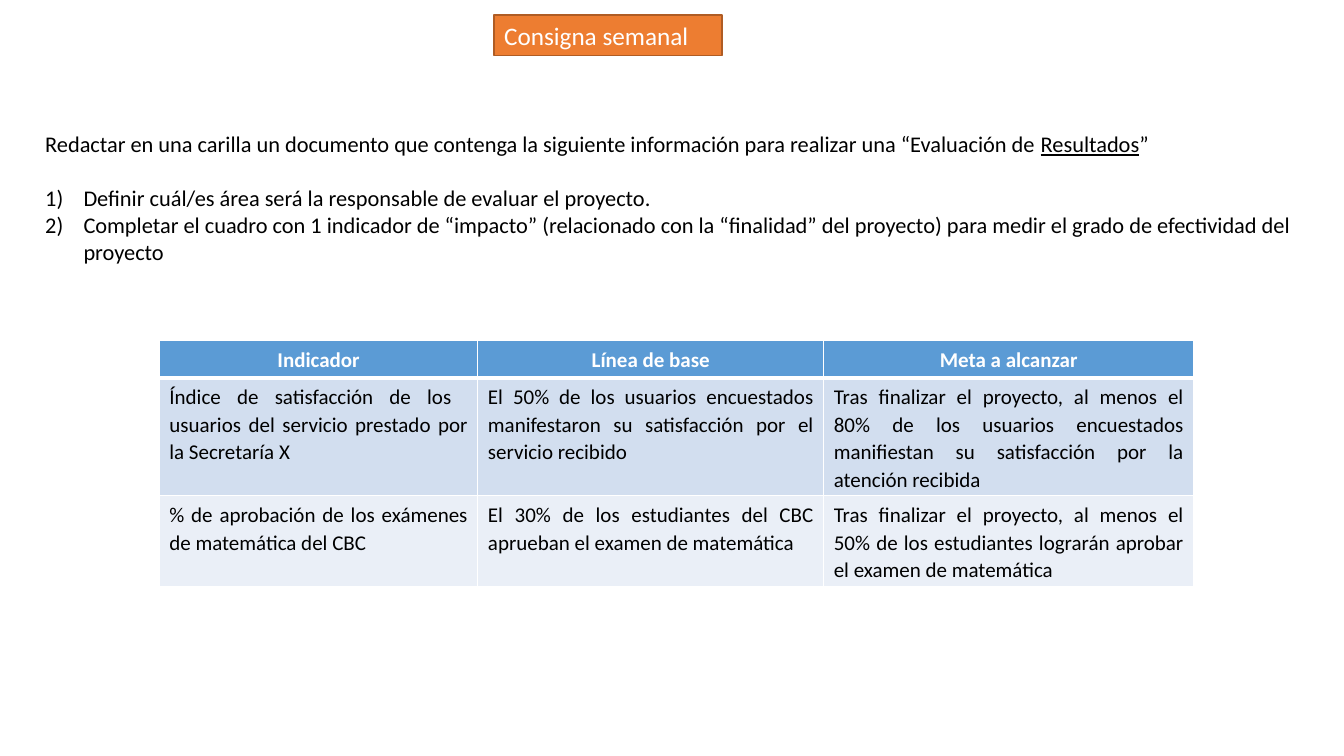
from lxml.etree import SubElement
from pptx import Presentation
from pptx.dml.color import RGBColor
from pptx.enum.text import MSO_ANCHOR, MSO_AUTO_SIZE, PP_ALIGN
from pptx.oxml.ns import qn
from pptx.util import Inches, Pt

COLORS = {
    "white": "FFFFFF", "black": "000000", "orange": "ED7D31", "rust": "AF5C24",
    "head": "5B9BD5", "band": "D2DEEF", "pale": "EAEFF7",
}
INTRO = [
    ("Redactar en una carilla un documento que contenga la siguiente información "
     "para realizar una “Evaluación de ", False),
    ("Resultados", True),
    ("”", False),
]
TASKS = [
    "Definir cuál/es área será la responsable de evaluar el proyecto.",
    "Completar el cuadro con 1 indicador de “impacto” (relacionado con la “finalidad” "
    "del proyecto) para medir el grado de efectividad del proyecto",
]
ROWS = [
    ["Indicador", "Línea de base", "Meta a alcanzar"],
    ["Índice de satisfacción de los  usuarios del servicio prestado por la Secretaría X",
     "El 50% de los usuarios encuestados manifestaron su satisfacción por el servicio recibido",
     "Tras finalizar el proyecto, al menos el 80% de los usuarios encuestados manifiestan "
     "su satisfacción por la atención recibida"],
    ["% de aprobación de los exámenes de matemática del CBC",
     "El 30% de los estudiantes del CBC aprueban el examen de matemática",
     "Tras finalizar el proyecto, al menos el 50% de los estudiantes lograrán aprobar "
     "el examen de matemática"],
]
WIDTHS = [3.16, 3.43, 3.67]
HEIGHTS = [0.37, 1.17, 0.9]
FILLS = ["head", "band", "pale"]


def color(name):
    """Return the named colour."""
    return RGBColor.from_string(COLORS[name])


def assign(item, values):
    """Set each attribute of the item from a dict."""
    for name, value in values.items():
        setattr(item, name, value)


def add_run(para, text, size, tint, **extra):
    """Add a formatted run to a paragraph."""
    run = para.add_run()
    run.text = text
    assign(run.font, {"name": "Calibri", "size": Pt(size), **extra})
    run.font.color.rgb = color(tint)


def paint(shape, tint):
    """Give a shape or cell a solid fill."""
    shape.fill.solid()
    shape.fill.fore_color.rgb = color(tint)


def add_title(slide, box):
    """Turn the title placeholder into the orange label."""
    title = slide.shapes.title
    assign(title, dict(zip(("left", "top", "width", "height"), map(Inches, box))))
    paint(title, "orange")
    title.line.color.rgb = color("rust")
    title.line.width = Pt(1)
    frame = title.text_frame
    assign(frame, {"word_wrap": True, "auto_size": MSO_AUTO_SIZE.NONE,
                   "vertical_anchor": MSO_ANCHOR.TOP})
    para = frame.paragraphs[0]
    para.alignment = PP_ALIGN.LEFT
    add_run(para, "Consigna semanal", 18, "white")


def add_brief(slide, box):
    """Write the introduction and the numbered tasks."""
    frame = slide.shapes.add_textbox(*map(Inches, box)).text_frame
    frame.word_wrap = True
    intro = frame.paragraphs[0]
    intro.space_after = Pt(19.5)
    for text, under in INTRO:
        add_run(intro, text, 16, "black", underline=under)
    for task in TASKS:
        para = frame.add_paragraph()
        props = para._p.get_or_add_pPr()
        props.set("marL", str(Inches(0.38)))
        props.set("indent", str(Inches(-0.38)))
        SubElement(props, qn("a:buFont"), typeface="+mj-lt")
        SubElement(props, qn("a:buAutoNum"), type="arabicParenR")
        add_run(para, task, 16, "black")


def add_edges(cell, row):
    """Draw white cell borders, thicker below the header."""
    props = cell._tc.get_or_add_tcPr()
    thick = {("B", 0), ("T", 1)}
    for side in "LRTB":
        width = Pt(3 if (side, row) in thick else 1)
        edge = SubElement(props, qn(f"a:ln{side}"), w=str(width))
        fill = SubElement(edge, qn("a:solidFill"))
        SubElement(fill, qn("a:srgbClr"), val=COLORS["white"])


def add_grid(slide, left, top):
    """Build the table of indicators."""
    box = map(Inches, (left, top, sum(WIDTHS), sum(HEIGHTS)))
    table = slide.shapes.add_table(len(ROWS), len(WIDTHS), *box).table
    for column, width in zip(table.columns, WIDTHS):
        column.width = Inches(width)
    for r, texts in enumerate(ROWS):
        table.rows[r].height = Inches(HEIGHTS[r])
        head = r == 0
        for c, text in enumerate(texts):
            cell = table.cell(r, c)
            add_edges(cell, r)
            paint(cell, FILLS[r])
            para = cell.text_frame.paragraphs[0]
            assign(para, {"alignment": PP_ALIGN.CENTER if head else PP_ALIGN.JUSTIFY,
                          "line_spacing": 1.07, "space_after": Pt(8)})
            add_run(para, text, 15, "white" if head else "black", bold=head)


def main():
    """Build and save the slide."""
    deck = Presentation()
    assign(deck, {"slide_width": Inches(13.33), "slide_height": Inches(7.5)})
    slide = deck.slides.add_slide(deck.slide_layouts[5])
    add_title(slide, (4.9, 0.15, 2.26, 0.4))
    add_brief(slide, (0.35, 1.24, 12.98, 1.72))
    add_grid(slide, 1.58, 3.38)
    deck.save("out.pptx")


if __name__ == "__main__":
    main()
